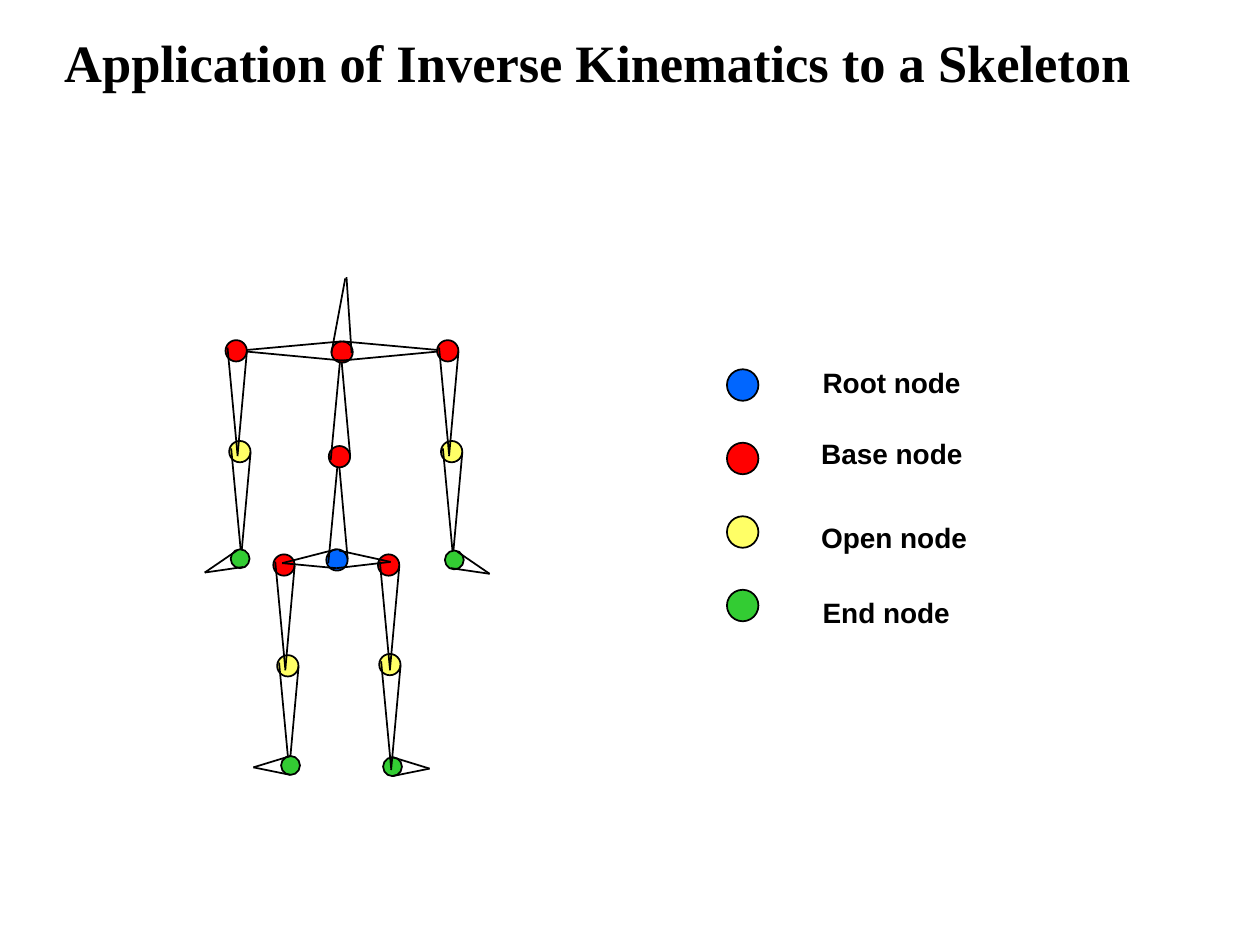
"""Build the slide that applies inverse kinematics to a skeleton."""
import pptx
import pptx.dml.color
import pptx.enum.shapes
import pptx.enum.text
import pptx.oxml.ns
import pptx.util
from lxml import etree

Pt = pptx.util.Pt
RGBColor = pptx.dml.color.RGBColor
BLACK = RGBColor(0x00, 0x00, 0x00)
BLUE = RGBColor(0x00, 0x66, 0xFF)
RED = RGBColor(0xFF, 0x00, 0x00)
YELLOW = RGBColor(0xFF, 0xFF, 0x66)
GREEN = RGBColor(0x33, 0xCC, 0x33)

deck = pptx.Presentation()
deck.slide_width, deck.slide_height = Pt(720), Pt(540)
page = deck.slides.add_slide(deck.slide_layouts[6])


def add_node(left, top, size, colour):
    node = page.shapes.add_shape(
        pptx.enum.shapes.MSO_SHAPE.OVAL, Pt(left), Pt(top), Pt(size), Pt(size))
    node.shadow.inherit = False
    node.fill.solid()
    node.fill.fore_color.rgb = colour
    node.line.color.rgb = BLACK
    node.line.width = Pt(1)


def add_text(text, left, top, width, height, frame_format, font_format):
    box = page.shapes.add_textbox(Pt(left), Pt(top), Pt(width), Pt(height))
    for name, value in frame_format.items():
        setattr(box.text_frame, name, value)
    para = box.text_frame.paragraphs[0]
    span = para.add_run()
    span.text = text
    span.font.color.rgb = BLACK
    for name, value in font_format.items():
        setattr(span.font, name, value)


add_text(
    "Application of Inverse Kinematics to a Skeleton", 33.1, 12.2, 650.2, 74.9,
    {"word_wrap": True, "vertical_anchor": pptx.enum.text.MSO_ANCHOR.TOP,
     "margin_left": Pt(3.6), "margin_right": Pt(3.6),
     "margin_top": Pt(5), "margin_bottom": Pt(1.4)},
    {"name": "Times New Roman", "size": Pt(30), "bold": True})

JOINT, TIP = 12.2, 10.8
down = [(12.2, 6.5, 6.8, 66.3), (1.1, 4.2, 6.8, 65)]
up = [(x1, JOINT - y1, x2, JOINT - y2) for x1, y1, x2, y2 in down]
right = [(y1, JOINT - x1, y2, JOINT - x2) for x1, y1, x2, y2 in down]
left = [(JOINT - x1, y1, JOINT - x2, y2) for x1, y1, x2, y2 in right]
right_foot = [(5.4, 0, 26.6, 6.5), (5.4, 10.8, 26.6, 6.5)]
left_foot = [(TIP - x1, y1, TIP - x2, y2) for x1, y1, x2, y2 in right_foot]
right_hand = [(7.2, 0.7, 25.6, 13.3), (3.6, 10.1, 25.6, 13.3)]
left_hand = [(TIP - x1, y1, TIP - x2, y2) for x1, y1, x2, y2 in right_hand]
pelvis = [(192.2, 313.9, 161.3, 321.8), (192.2, 324.7, 161.3, 321.8),
          (193.7, 314.6, 223.2, 321.1), (192.2, 324.7, 223.2, 321.1)]
head = [(189.4, 201.6, 197.3, 159.1), (198, 158.4, 200.9, 201.6)]

skeleton = [
    (158.4, 374.4, JOINT, YELLOW, down),
    (218.9, 432.7, TIP, GREEN, right_foot),
    (160.6, 432, TIP, GREEN, left_foot),
    (156.2, 316.8, JOINT, RED, down),
    (216.7, 373.7, JOINT, YELLOW, down),
    (216, 316.8, JOINT, RED, down),
    (186.5, 313.9, JOINT, BLUE, up),
    (187.9, 254.9, JOINT, RED, up),
    (189.4, 195.1, JOINT, RED, left + right),
    (131, 252, JOINT, YELLOW, down),
    (128.9, 194.4, JOINT, RED, down),
    (252, 252, JOINT, YELLOW, down),
    (249.8, 194.4, JOINT, RED, down),
    (0, 0, 0, None, pelvis + head),
    (131.8, 313.9, TIP, GREEN, left_hand),
    (254.2, 314.6, TIP, GREEN, right_hand),
]
for x, y, size, colour, edges in skeleton:
    if colour is not None:
        add_node(x, y, size, colour)
    for x1, y1, x2, y2 in edges:
        edge = page.shapes.add_connector(
            pptx.enum.shapes.MSO_CONNECTOR.STRAIGHT,
            Pt(x + x1), Pt(y + y1), Pt(x + x2), Pt(y + y2))
        edge.line.color.rgb = BLACK
        edge.line.width = Pt(1)
        etree.SubElement(edge._element.spPr, pptx.oxml.ns.qn("a:effectLst"))

legend = [
    ("Root node", BLUE, 463, 205.2, 93.6),
    ("Base node", RED, 462.2, 246.2, 95),
    ("Open node", YELLOW, 462.2, 293.8, 97.9),
    ("End node", GREEN, 463, 337, 87.1),
]
for row, (label, colour, x, y, width) in enumerate(legend):
    add_node(415.4, 211 + 42 * row, 18, colour)
    add_text(
        label, x, y, width, 26.6,
        {"word_wrap": False,
         "auto_size": pptx.enum.text.MSO_AUTO_SIZE.SHAPE_TO_FIT_TEXT},
        {"name": "Arial", "size": Pt(16), "bold": True})

deck.save("out.pptx")
